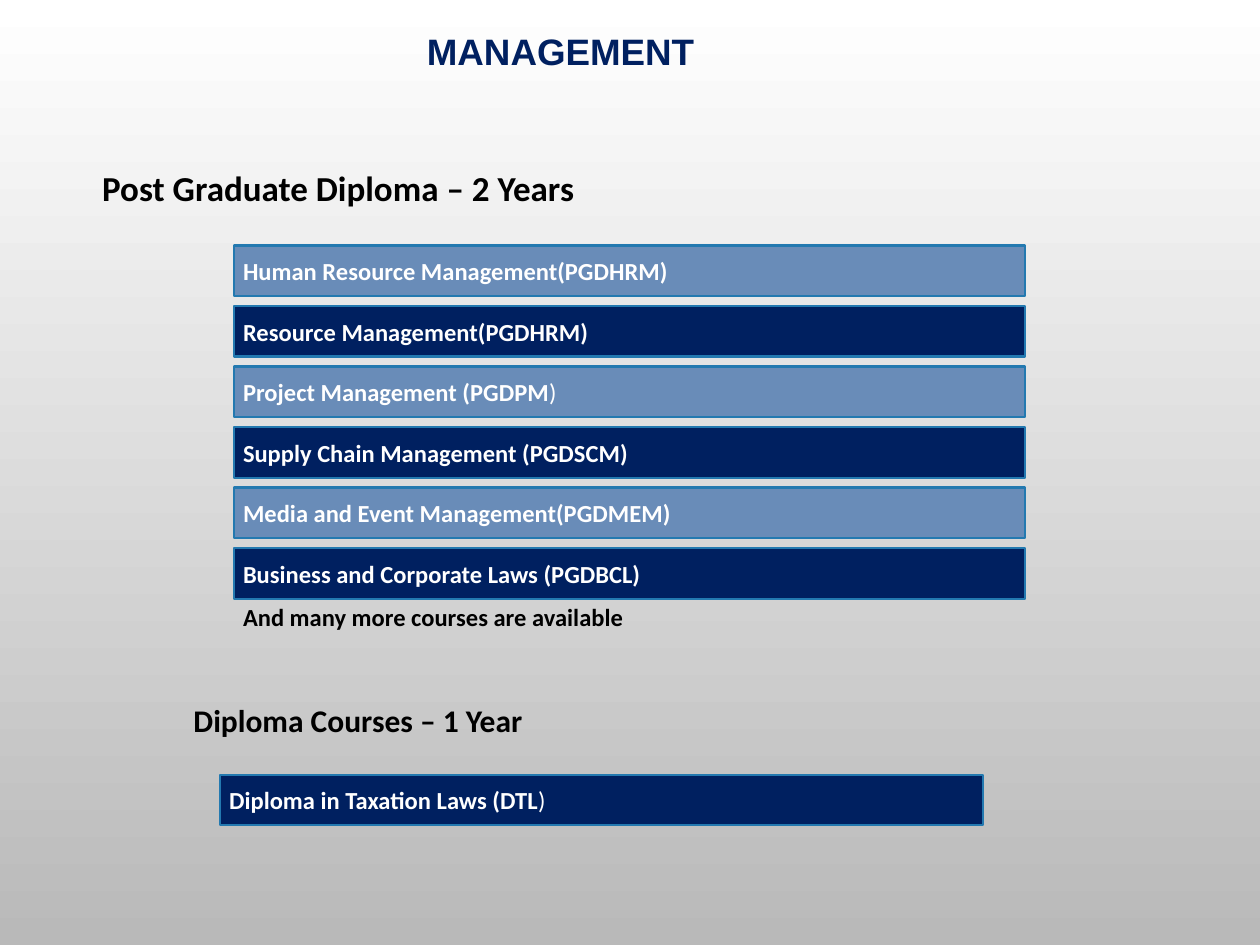
"""Build the Management courses slide with its diploma lists."""
import pptx
import pptx.dml.color
import pptx.enum.shapes
import pptx.enum.text
import pptx.util
from pptx.dml.color import RGBColor
from pptx.util import Cm

NAVY = RGBColor(0x00, 0x20, 0x60)
STEEL = RGBColor(0x69, 0x8C, 0xB8)
OUTLINE = RGBColor(0x23, 0x79, 0xB0)
WHITE = RGBColor(0xFF, 0xFF, 0xFF)
GREY = RGBColor(0xB9, 0xB9, 0xB9)
BLACK = RGBColor(0x00, 0x00, 0x00)
LEFT = pptx.enum.text.PP_ALIGN.LEFT
CENTER = pptx.enum.text.PP_ALIGN.CENTER


def write_text(shape, text, size=14, color=BLACK, font="Calibri",
               align=LEFT, indent=0.18, wrap=True, light_tail=""):
    frame = shape.text_frame
    frame.word_wrap = wrap
    frame.auto_size = pptx.enum.text.MSO_AUTO_SIZE.NONE
    frame.vertical_anchor = pptx.enum.text.MSO_ANCHOR.MIDDLE
    frame.margin_left = Cm(indent)
    frame.margin_right = Cm(0.18)
    frame.margin_top = frame.margin_bottom = Cm(0.1)
    paragraph = frame.paragraphs[0]
    paragraph.alignment = align
    for part, bold in ((text, True), (light_tail, False)):
        if part:
            run = paragraph.add_run()
            run.text = part
            run.font.name = font
            run.font.size = pptx.util.Pt(size)
            run.font.bold = bold
            run.font.color.rgb = color


presentation = pptx.Presentation()
presentation.slide_width = Cm(25.4)
presentation.slide_height = Cm(19.05)
slide = presentation.slides.add_slide(presentation.slide_layouts.get_by_name("Title Only"))

background = slide.background.fill
background.gradient()
background.gradient_angle = 270
for stop, position, color in zip(background.gradient_stops, (0, 1), (WHITE, GREY)):
    stop.position = position
    stop.color.rgb = color

title = slide.shapes.title
title.left, title.top, title.width, title.height = Cm(5.2), Cm(0.48), Cm(12.2), Cm(1.1)
write_text(title, "MANAGEMENT", size=21, color=NAVY, font="Arial", align=CENTER)

labels = [
    ("Post Graduate Diploma – 2 Years", 0, 3.25, 17.98, 1.04, 20, 2.06, True),
    ("And many more courses are available", 4.72, 12.04, 8.2, 0.79, 14, 0.18, False),
    ("Diploma Courses – 1 Year", 0, 14.02, 10.8, 0.97, 18, 3.9, False),
]
for text, left, top, width, height, size, indent, wrap in labels:
    label = slide.shapes.add_textbox(Cm(left), Cm(top), Cm(width), Cm(height))
    write_text(label, text, size=size, indent=indent, wrap=wrap)

postgraduate_courses = [
    ("Human Resource Management(PGDHRM)", ""),
    ("Resource Management(PGDHRM)", ""),
    ("Project Management (PGDPM", ")"),
    ("Supply Chain Management (PGDSCM)", ""),
    ("Media and Event Management(PGDMEM)", ""),
    ("Business and Corporate Laws (PGDBCL)", ""),
]
bars = [
    (text, tail, 4.72, 4.95 + 1.22 * index, 15.95, (STEEL, NAVY)[index % 2])
    for index, (text, tail) in enumerate(postgraduate_courses)
]
bars.append(("Diploma in Taxation Laws (DTL", ")", 4.44, 15.62, 15.37, NAVY))
for text, tail, left, top, width, color in bars:
    bar = slide.shapes.add_shape(
        pptx.enum.shapes.MSO_SHAPE.RECTANGLE, Cm(left), Cm(top), Cm(width), Cm(1.02))
    bar.shadow.inherit = False
    bar.fill.solid()
    bar.fill.fore_color.rgb = color
    bar.line.color.rgb = OUTLINE
    bar.line.width = pptx.util.Pt(1.25)
    write_text(bar, text, color=WHITE, light_tail=tail)

presentation.save("out.pptx")
